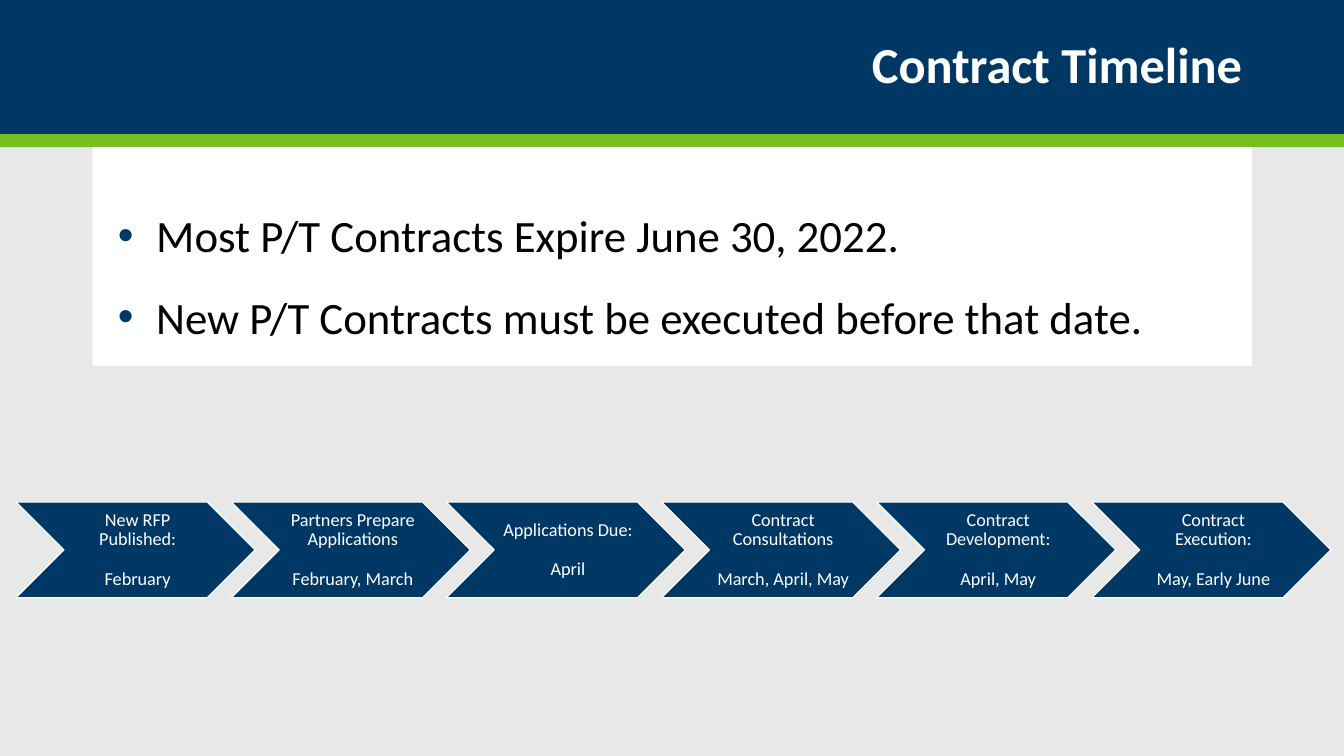
import pptx
import pptx.util
import pptx.dml.color
import pptx.enum.shapes
import pptx.enum.text
import lxml.etree

Inches, Pt = pptx.util.Inches, pptx.util.Pt
RGBColor = pptx.dml.color.RGBColor
SHAPE = pptx.enum.shapes.MSO_SHAPE
ALIGN = pptx.enum.text.PP_ALIGN
ANCHOR = pptx.enum.text.MSO_ANCHOR

NAVY = RGBColor(0x00, 0x38, 0x65)
GREEN = RGBColor(0x78, 0xBE, 0x21)
GREY = RGBColor(0xE8, 0xE8, 0xE8)
WHITE = RGBColor(0xFF, 0xFF, 0xFF)
BLACK = RGBColor(0x00, 0x00, 0x00)
FONT = "Calibri"

BULLETS = [
    "Most P/T Contracts Expire June 30, 2022.",
    "New P/T Contracts must be executed before that date.",
]
STEPS = [
    ("New RFP Published:", "February"),
    ("Partners Prepare Applications", "February, March"),
    ("Applications Due:", "April"),
    ("Contract Consultations", "March, April, May"),
    ("Contract Development:", "April, May"),
    ("Contract Execution:", "May, Early June"),
]


def add_block(page, kind, box, fill, line=None):
    """Add a filled preset shape; box is left, top, width, height in inches."""
    block = page.shapes.add_shape(kind, *map(Inches, box))
    block.shadow.inherit = False
    block.fill.solid()
    block.fill.fore_color.rgb = fill
    if line is None:
        block.line.fill.background()
    else:
        block.line.color.rgb = line
        block.line.width = Pt(0.85)
    return block


def set_frame(shape, insets, anchor):
    """Set wrapping, anchor and left, top, right, bottom insets in inches."""
    frame = shape.text_frame
    frame.word_wrap = True
    frame.vertical_anchor = anchor
    (frame.margin_left, frame.margin_top,
     frame.margin_right, frame.margin_bottom) = map(Inches, insets)
    return frame


def write(para, text, size, color, bold=False, align=ALIGN.LEFT,
          spacing=1.0, before=0, after=0):
    """Put formatted text into a paragraph."""
    para.alignment = align
    para.line_spacing = spacing
    para.space_before, para.space_after = Pt(before), Pt(after)
    span = para.add_run()
    span.text = text
    span.font.name = FONT
    span.font.size = Pt(size)
    span.font.bold = bold
    span.font.color.rgb = color


def add_bullet(para, color, indent):
    """Give a paragraph a hanging, coloured bullet."""
    props = para._p.get_or_add_pPr()
    props.set("marL", str(Inches(indent)))
    props.set("indent", str(-Inches(indent)))
    qn = pptx.oxml.ns.qn
    bullet_color = lxml.etree.SubElement(props, qn("a:buClr"))
    lxml.etree.SubElement(bullet_color, qn("a:srgbClr"), val=str(color))
    lxml.etree.SubElement(props, qn("a:buFont"), typeface="Arial")
    lxml.etree.SubElement(props, qn("a:buChar"), char="•")


def draw_header(page, box, title):
    left, top, width, height = box
    stripe = 0.13
    band = height - stripe
    add_block(page, SHAPE.RECTANGLE, (left, top, width, band), NAVY)
    add_block(page, SHAPE.RECTANGLE, (left, top + band, width, stripe), GREEN)
    title_box = page.shapes.add_textbox(
        *map(Inches, (left + 0.92, top + 0.17, width - 1.83, 1)))
    frame = set_frame(title_box, (0.1, 0.05, 0.1, 0.05), ANCHOR.MIDDLE)
    write(frame.paragraphs[0], title, 36, WHITE, bold=True,
          align=ALIGN.RIGHT, spacing=0.9)


def draw_bullets(page, box, lines):
    panel = add_block(page, SHAPE.RECTANGLE, box, WHITE)
    frame = set_frame(panel, (0.25, 0.6, 0.3, 0.05), ANCHOR.TOP)
    for index, line in enumerate(lines):
        para = frame.add_paragraph() if index else frame.paragraphs[0]
        write(para, line, 32, BLACK, before=10, after=10)
        add_bullet(para, NAVY, 0.38)


def draw_timeline(page, box, steps):
    left, top, width, height = box
    overlap = 0.1  # share of a chevron that lies under the next one
    chevron_width = width / (len(steps) - overlap * (len(steps) - 1))
    pitch = chevron_width * (1 - overlap)
    for index, (step, months) in enumerate(steps):
        chevron = add_block(
            page, SHAPE.CHEVRON,
            (left + index * pitch, top, chevron_width, height), NAVY, WHITE)
        frame = set_frame(chevron, (0.06, 0.02, 0.02, 0.02), ANCHOR.MIDDLE)
        write(frame.paragraphs[0], step, 13, WHITE,
              align=ALIGN.CENTER, spacing=0.9)
        write(frame.add_paragraph(), months, 13, WHITE,
              align=ALIGN.CENTER, spacing=0.9, before=14)


def main():
    deck = pptx.Presentation()
    deck.slide_width, deck.slide_height = Inches(13.33), Inches(7.5)
    page = deck.slides.add_slide(deck.slide_layouts[6])
    page.background.fill.solid()
    page.background.fill.fore_color.rgb = GREY

    draw_header(page, (0, 0, 13.33, 1.46), "Contract Timeline")
    draw_bullets(page, (0.92, 1.46, 11.5, 2.17), BULLETS)
    draw_timeline(page, (0.16, 4.98, 13.04, 0.95), STEPS)

    deck.save("out.pptx")


if __name__ == "__main__":
    main()
